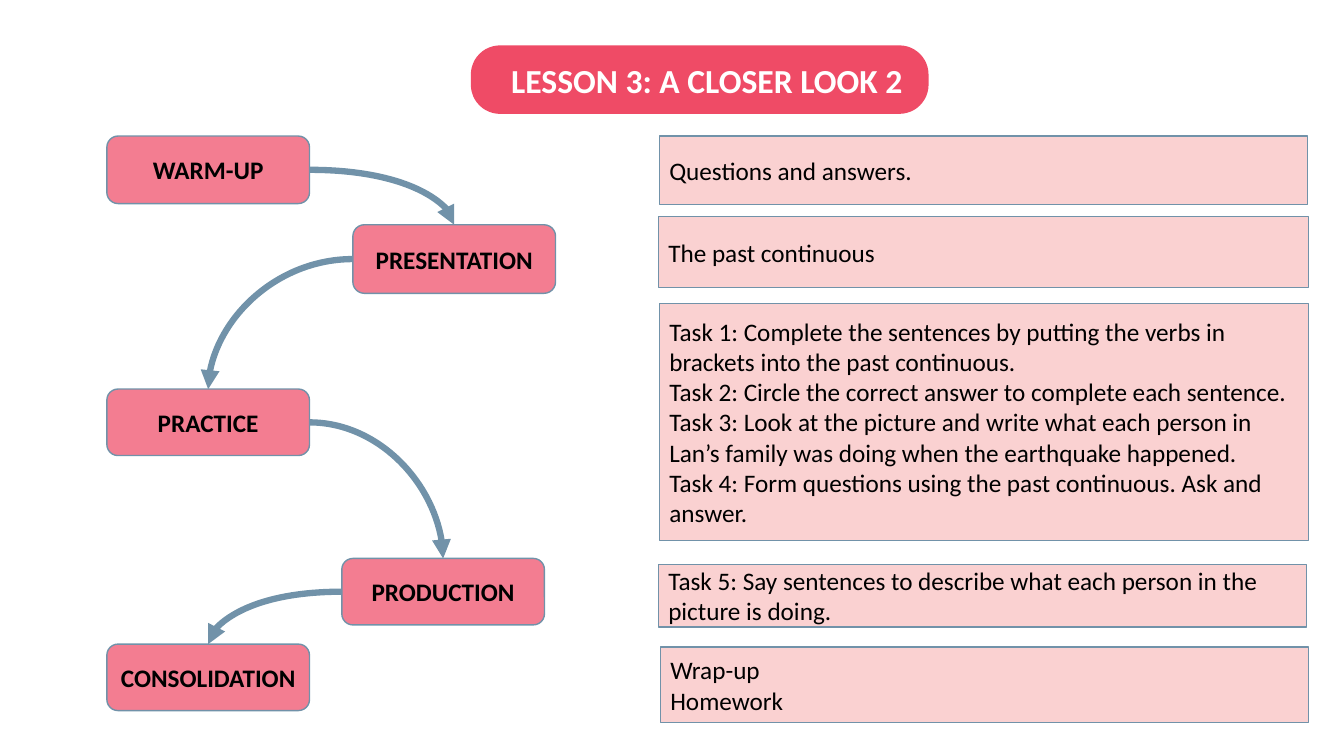
from lxml.etree import SubElement
from pptx import Presentation
from pptx.dml.color import RGBColor
from pptx.enum.shapes import MSO_CONNECTOR, MSO_SHAPE
from pptx.enum.text import MSO_ANCHOR, MSO_AUTO_SIZE, PP_ALIGN
from pptx.oxml.ns import qn
from pptx.util import Inches, Pt

COLORS = {
    "title": "EF4B66",
    "stage": "F37D91",
    "detail": "F7A5A5",
    "line": "7192A9",
    "white": "FFFFFF",
    "black": "000000",
}
STAGE_WIDTH = 2.01
TITLE_BOX = (4.67, 0.45, 4.54, 0.68)
STAGES = [  # name, left, top, height
    ("WARM-UP", 1.06, 1.35, 0.67),
    ("PRESENTATION", 3.5, 2.23, 0.68),
    ("PRACTICE", 1.06, 3.86, 0.66),
    ("PRODUCTION", 3.39, 5.54, 0.66),
    ("CONSOLIDATION", 1.06, 6.39, 0.66),
]
DETAILS = [  # box, paragraphs
    ((6.54, 1.35, 6.43, 0.68), ["Questions and answers."]),
    ((6.53, 2.15, 6.45, 0.7), ["The past continuous"]),
    ((6.54, 3.01, 6.44, 2.35), [
        "Task 1: Complete the sentences by putting the verbs in brackets "
        "into the past continuous.",
        "Task 2: Circle the correct answer to complete each sentence.",
        "Task 3: Look at the picture and write what each person in Lan’s "
        "family was doing when the earthquake happened.",
        "Task 4: Form questions using the past continuous. Ask and answer.",
    ]),
    ((6.53, 5.6, 6.43, 0.62), [
        "Task 5: Say sentences to describe what each person in the picture "
        "is doing."]),
    ((6.55, 6.42, 6.43, 0.75), ["Wrap-up", "Homework"]),
]


def rgb(name):
    return RGBColor.from_string(COLORS[name])


def write(sp, paragraphs, size=18, color="black", bold=False,
          align=PP_ALIGN.LEFT):
    tf = sp.text_frame
    tf.word_wrap = True
    tf.auto_size = MSO_AUTO_SIZE.NONE
    tf.vertical_anchor = MSO_ANCHOR.MIDDLE
    for i, text in enumerate(paragraphs):
        p = tf.add_paragraph() if i else tf.paragraphs[0]
        p.alignment = align
        r = p.add_run()
        r.text = text
        r.font.name = "Calibri"
        r.font.size = Pt(size)
        r.font.bold = bold
        r.font.color.rgb = rgb(color)


def add_box(s, kind, box, fill, line=None, alpha=None):
    """Add a filled shape; alpha is the opacity in percent."""
    sp = s.shapes.add_shape(kind, *map(Inches, box))
    sp.shadow.inherit = False
    sp.fill.solid()
    sp.fill.fore_color.rgb = rgb(fill)
    if alpha is not None:
        clr = sp._element.spPr.find(qn("a:solidFill")).find(qn("a:srgbClr"))
        SubElement(clr, qn("a:alpha"), val=str(alpha * 1000))
    if line:
        sp.line.color.rgb = rgb(line)
        sp.line.width = Pt(1)
    else:
        sp.line.fill.background()
    return sp


def add_title(s, text):
    pill = add_box(s, MSO_SHAPE.ROUNDED_RECTANGLE, TITLE_BOX, "title")
    pill.adjustments[0] = 0.427
    title = s.shapes.title
    title.left, title.top, title.width, title.height = map(Inches, TITLE_BOX)
    pill._element.addnext(title._element)
    write(title, [text], size=24, color="white", bold=True)
    title.text_frame.margin_left = Inches(0.4)
    title.text_frame.margin_right = 0


def add_stage(s, name, left, top, height):
    sp = add_box(s, MSO_SHAPE.ROUNDED_RECTANGLE,
                 (left, top, STAGE_WIDTH, height), "stage", "line")
    write(sp, [name], bold=True, align=PP_ALIGN.CENTER)
    return sp


def add_curved_arrow(s, start, end):
    """Curve from the facing side of start to the top of end."""
    cn = s.shapes.add_connector(MSO_CONNECTOR.CURVE, 0, 0, 0, 0)
    cn.begin_connect(start, 3 if start.left < end.left else 1)
    cn.end_connect(end, 0)
    cn.line.color.rgb = rgb("line")
    cn.line.width = Pt(4.5)
    spPr = cn._element.spPr
    spPr.find(qn("a:prstGeom")).set("prst", "curvedConnector2")
    SubElement(spPr.find(qn("a:ln")), qn("a:tailEnd"), type="triangle")
    SubElement(spPr, qn("a:effectLst"))


def main():
    prs = Presentation()
    prs.slide_width, prs.slide_height = Inches(13.33), Inches(7.5)
    s = prs.slides.add_slide(prs.slide_layouts[5])
    add_title(s, "LESSON 3: A CLOSER LOOK 2")
    for box, paragraphs in DETAILS:
        sp = add_box(s, MSO_SHAPE.RECTANGLE, box, "detail", "line", alpha=50)
        write(sp, paragraphs)
    stages = [add_stage(s, *stage) for stage in STAGES]
    for start, end in zip(stages, stages[1:]):
        add_curved_arrow(s, start, end)
    prs.save("out.pptx")


if __name__ == "__main__":
    main()
